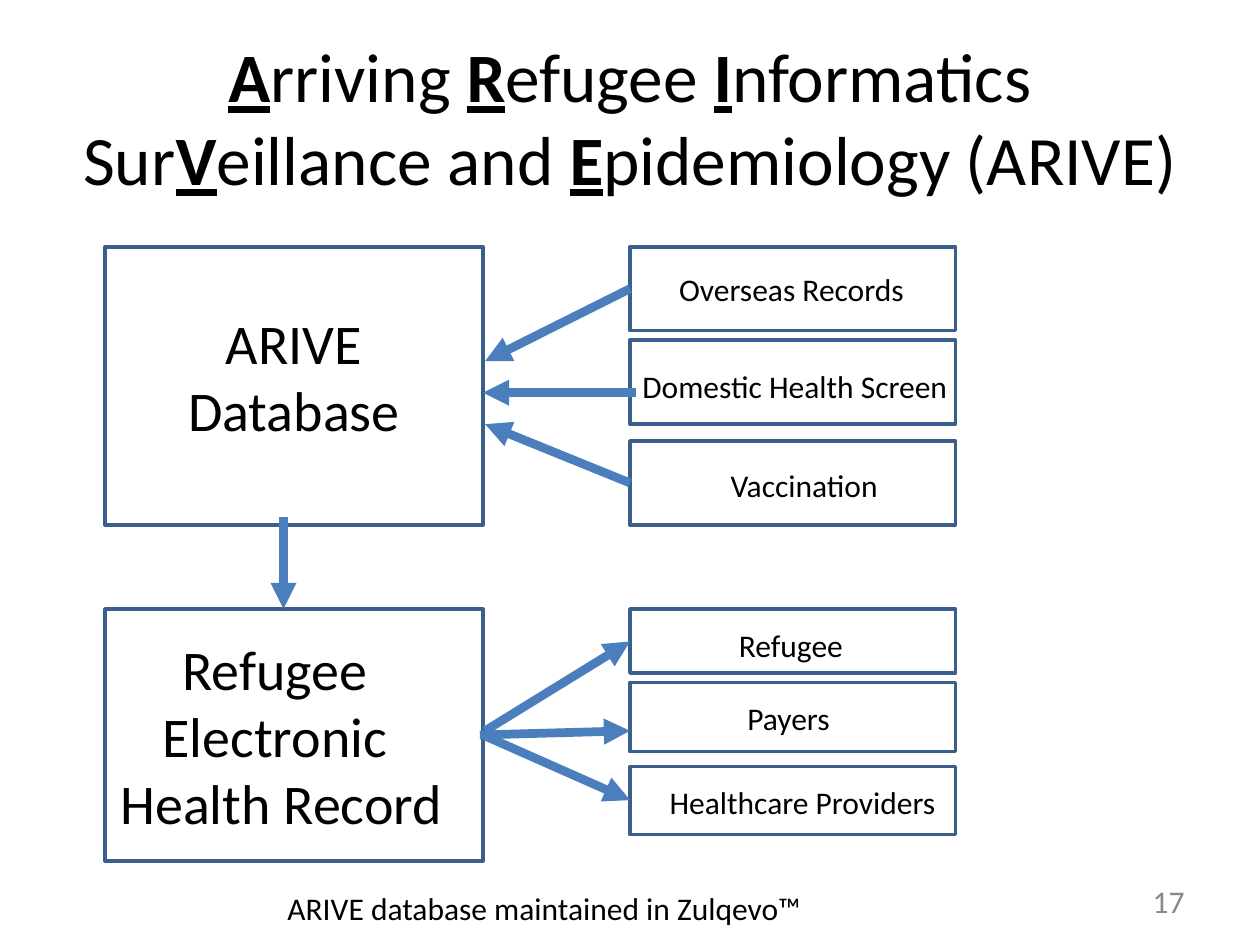
"""Builds the ARIVE data flow slide on a grid of 120 columns by 90 rows."""
from dataclasses import dataclass

from lxml.etree import SubElement
from pptx import Presentation
from pptx.dml.color import RGBColor as RGB
from pptx.enum.shapes import MSO_CONNECTOR as CONN, MSO_SHAPE as SHAPE
from pptx.enum.text import MSO_ANCHOR as ANCHOR, MSO_AUTO_SIZE as FIT, PP_ALIGN as ALIGN
from pptx.oxml.ns import qn
from pptx.util import Inches, Pt


@dataclass(frozen=True)
class Theme:
    font: str = "Calibri"
    ink: RGB = RGB(0x00, 0x00, 0x00)
    muted: RGB = RGB(0x89, 0x89, 0x89)
    border: RGB = RGB(0x3A, 0x5F, 0x8C)
    arrow: RGB = RGB(0x4B, 0x7E, 0xBC)
    title: float = 39.6
    heading: float = 32
    label: float = 18


theme = Theme()
prs = Presentation()
prs.slide_width, prs.slide_height = Inches(10), Inches(7.5)
col, row = prs.slide_width / 120, prs.slide_height / 90
s = prs.slides.add_slide(prs.slide_layouts[5])


def grid(*cells):
    return [round(n * (row if i % 2 else col)) for i, n in enumerate(cells)]


def add_run(p, text, size, color=theme.ink, strong=False):
    r = p.add_run()
    r.text = text
    r.font.name, r.font.size = theme.font, Pt(size)
    r.font.color.rgb = color
    r.font.bold = r.font.underline = strong


title = s.shapes.title
title.left, title.top, title.width, title.height = grid(6, 3.6, 108, 15)
tf = title.text_frame
tf.word_wrap, tf.auto_size, tf.vertical_anchor = True, FIT.NONE, ANCHOR.MIDDLE
p = tf.paragraphs[0]
p.alignment = ALIGN.CENTER
title_parts = [("A", "rriving "), ("R", "efugee "), ("I", "nformatics Sur"),
               ("V", "eillance and "), ("E", "pidemiology (ARIVE)")]
for initial, rest in title_parts:
    add_run(p, initial, theme.title, strong=True)
    add_run(p, rest, theme.title)

main_x, main_w, side_x, side_w = 10, 36, 60, 31
boxes = [
    (main_x, 23.5, main_w, 26.5),
    (main_x, 58, main_w, 24),
    (side_x, 23.5, side_w, 8),
    (side_x, 32.4, side_w, 8),
    (side_x, 42, side_w, 8),
    (side_x, 58, side_w, 6.1),
    (side_x, 65, side_w, 6.6),
    (side_x, 73, side_w, 6.5),
]
for box in boxes:
    sp = s.shapes.add_shape(SHAPE.RECTANGLE, *grid(*box))
    sp.shadow.inherit = False
    sp.fill.background()
    sp.line.color.rgb, sp.line.width = theme.border, Pt(2)

arrows = [
    (60, 27.5, 46.2, 34.4),
    (60, 46, 46.2, 40.4),
    (60.6, 37.4, 46, 37.4),
    (27, 49.2, 27, 58),
    (45.7, 70, 60, 69.6),
    (46.2, 69.6, 60, 61.1),
    (46.2, 70.1, 60, 76.2),
]
for ends in arrows:
    cxn = s.shapes.add_connector(CONN.STRAIGHT, *grid(*ends))
    cxn.line.color.rgb, cxn.line.width = theme.arrow, Pt(5)
    SubElement(cxn.line._get_or_add_ln(), qn("a:tailEnd"), type="triangle")
    SubElement(cxn._element.spPr, qn("a:effectLst"))

texts = [
    (["ARIVE Database"], (16, 28.8, 24, 14.2), theme.heading, theme.ink, ALIGN.CENTER, True),
    (["Refugee ", "Electronic ", "Health Record"], (10.1, 59.8, 33.4, 20.6),
     theme.heading, theme.ink, ALIGN.CENTER, False),
    (["ARIVE database maintained in Zulqevo™"], (26.2, 84.1, 74.6, 4.8),
     theme.label, theme.ink, ALIGN.LEFT, True),
    (["17"], (86, 83.4, 28, 4.8), theme.label, theme.muted, ALIGN.RIGHT, True),
]
labels = [
    ("Overseas Records", 63.5, 25.1, 24),
    ("Domestic Health Screen", 60, 34.4, 31.8),
    ("Vaccination", 68.4, 43.8, 16.7),
    ("Refugee", 69.2, 59, 12.5),
    ("Payers", 70, 66, 11),
    ("Healthcare Providers", 62.6, 74, 28.1),
]
texts += [([text], (x, y, w, 4.8), theme.label, theme.ink, ALIGN.LEFT, False)
          for text, x, y, w in labels]
for lines, box, size, color, align, wrap in texts:
    tf = s.shapes.add_textbox(*grid(*box)).text_frame
    tf.word_wrap = wrap
    for i, line in enumerate(lines):
        p = tf.add_paragraph() if i else tf.paragraphs[0]
        p.alignment = align
        add_run(p, line, size, color)

prs.save("out.pptx")
